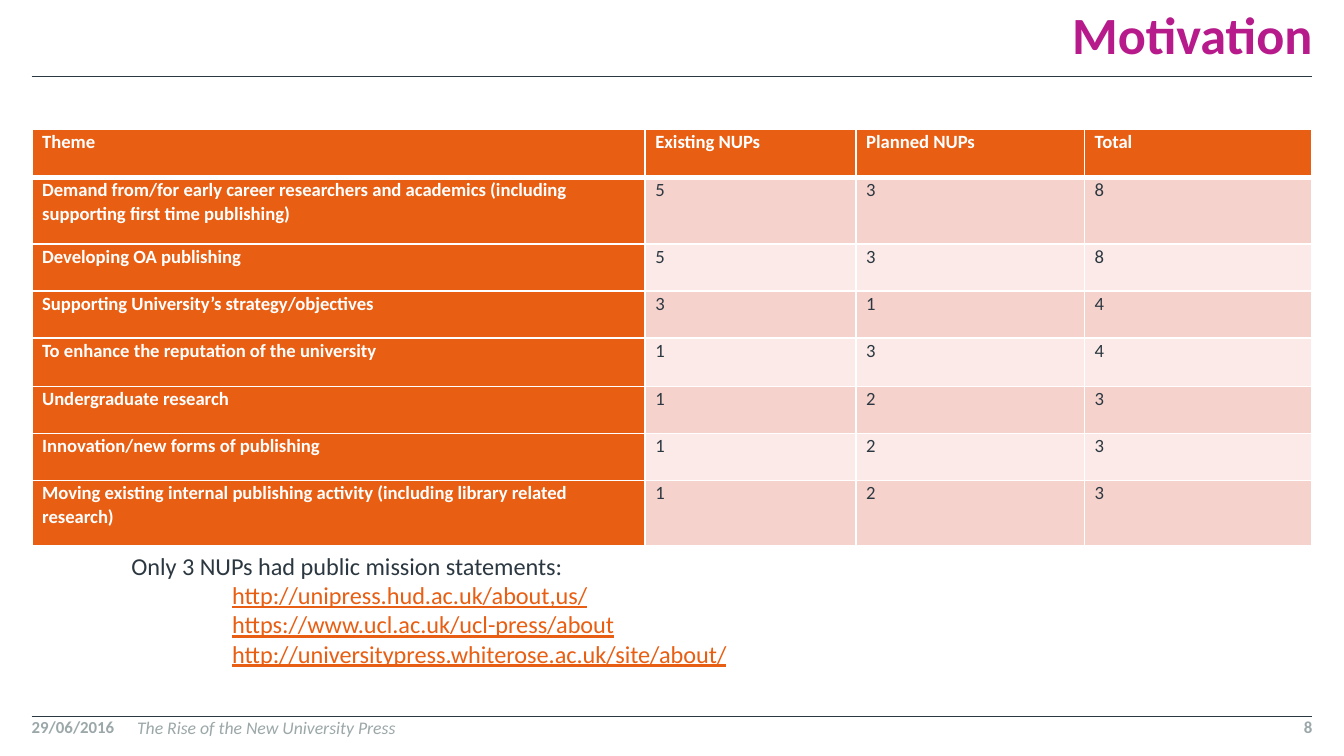
from dataclasses import dataclass

from lxml import etree
from pptx import Presentation
from pptx.dml.color import RGBColor
from pptx.enum.shapes import MSO_CONNECTOR
from pptx.enum.text import MSO_ANCHOR, PP_ALIGN
from pptx.oxml.ns import qn
from pptx.util import Pt

STRAIGHT = MSO_CONNECTOR.STRAIGHT
LEFT, RIGHT = PP_ALIGN.LEFT, PP_ALIGN.RIGHT
TOP, BOTTOM = MSO_ANCHOR.TOP, MSO_ANCHOR.BOTTOM


@dataclass(frozen=True)
class Theme:
    font: str = "Calibri"
    title: str = "B71A8B"
    ink: str = "2C3841"
    accent: str = "E85E12"
    band_dark: str = "F6D2CC"
    band_light: str = "FBEAE7"
    white: str = "FFFFFF"
    muted: str = "9BA7A8"
    title_size: float = 28
    table_size: float = 10
    note_size: float = 13
    footer_size: float = 9
    talk_size: float = 9.5


THEME = Theme()
PAGE_WIDTH, PAGE_HEIGHT = 720, 405
MARGIN = 17
CONTENT_RIGHT = PAGE_WIDTH - MARGIN
FOOTER_TOP = 383.7

COLUMN_WIDTHS = (328.5, 113, 122.4, 121.7)
ROW_HEIGHTS = (25.8, 35.7, 25.2, 25.2, 25.9, 25.2, 25.2, 34.8)
ROWS = (
    ("Theme", "Existing NUPs", "Planned NUPs", "Total"),
    ("Demand from/for early career researchers and academics "
     "(including supporting first time publishing)", "5", "3", "8"),
    ("Developing OA publishing", "5", "3", "8"),
    ("Supporting University’s strategy/objectives", "3", "1", "4"),
    ("To enhance the reputation of the university", "1", "3", "4"),
    ("Undergraduate research", "1", "2", "3"),
    ("Innovation/new forms of publishing", "1", "2", "3"),
    ("Moving existing internal publishing activity "
     "(including library related research)", "1", "2", "3"),
)
MISSION_LINKS = (
    "http://unipress.hud.ac.uk/about,us/",
    "https://www.ucl.ac.uk/ucl-press/about",
    "http://universitypress.whiterose.ac.uk/site/about/",
)


def add_span(para, text, size, color, bold=False, italic=False, underline=False):
    span = para.add_run()
    span.text = text
    font = span.font
    font.name, font.size = THEME.font, Pt(size)
    font.color.rgb = RGBColor.from_string(color)
    font.bold, font.italic, font.underline = bold, italic, underline


def add_box(page, left, top, width, height, insets=(0, 0, 0, 0), anchor=TOP):
    box = page.shapes.add_textbox(Pt(left), Pt(top), Pt(width), Pt(height))
    frame = box.text_frame
    frame.word_wrap = True
    frame.vertical_anchor = anchor
    (frame.margin_left, frame.margin_top,
     frame.margin_right, frame.margin_bottom) = map(Pt, insets)
    return frame


def add_rule(page, y):
    rule = page.shapes.add_connector(
        STRAIGHT, Pt(MARGIN), Pt(y), Pt(CONTENT_RIGHT), Pt(y))
    rule.line.color.rgb = RGBColor.from_string(THEME.ink)
    rule.line.width = Pt(0.5)
    etree.SubElement(rule._element.spPr, qn("a:effectLst"))


def add_title(page, text):
    frame = add_box(page, 218.16, 0, 484.84, 35.28, anchor=BOTTOM)
    para = frame.paragraphs[0]
    para.alignment, para.line_spacing = RIGHT, 0.9
    add_span(para, text, THEME.title_size, THEME.title, bold=True)


def set_borders(cell, top, bottom):
    properties = cell._tc.get_or_add_tcPr()
    for side, width in (("L", 1), ("R", 1), ("T", top), ("B", bottom)):
        line = etree.SubElement(properties, qn(f"a:ln{side}"), w=str(Pt(width)))
        fill = etree.SubElement(line, qn("a:solidFill"))
        etree.SubElement(fill, qn("a:srgbClr"), val=THEME.white)


def fill_cell(cell, text, row, column):
    is_label = row == 0 or column == 0
    band = THEME.band_dark if row % 2 else THEME.band_light
    # A heavier line separates the header from the body
    set_borders(cell, top=3 if row == 1 else 1, bottom=3 if row == 0 else 1)
    cell.fill.solid()
    cell.fill.fore_color.rgb = RGBColor.from_string(
        THEME.accent if is_label else band)
    cell.margin_left = cell.margin_right = Pt(5.6)
    cell.margin_top = cell.margin_bottom = Pt(0)
    para = cell.text_frame.paragraphs[0]
    para.line_spacing = 1.07
    add_span(para, text, THEME.table_size,
             THEME.white if is_label else THEME.ink, bold=is_label)


def add_theme_table(page):
    table = page.shapes.add_table(
        len(ROWS), len(COLUMN_WIDTHS), Pt(MARGIN), Pt(69.3),
        Pt(sum(COLUMN_WIDTHS)), Pt(sum(ROW_HEIGHTS))).table
    for column, width in zip(table.columns, COLUMN_WIDTHS):
        column.width = Pt(width)
    for row, height in zip(table.rows, ROW_HEIGHTS):
        row.height = Pt(height)
    for row, texts in enumerate(ROWS):
        for column, text in enumerate(texts):
            fill_cell(table.cell(row, column), text, row, column)


def add_mission_note(page):
    frame = add_box(page, 63.36, 291.8, 335.52, 85.7, insets=(7.2, 3.6, 7.2, 3.6))
    add_span(frame.paragraphs[0], "Only 3 NUPs had public mission statements:",
             THEME.note_size, THEME.ink)
    for link in MISSION_LINKS:
        para = frame.add_paragraph()
        para._p.get_or_add_pPr().set("marL", str(Pt(54)))
        add_span(para, link, THEME.note_size, THEME.accent, underline=True)


def add_footer_text(page, text, left, width, size, align=LEFT, inset=0, **style):
    frame = add_box(page, left, FOOTER_TOP, width, 12.96, insets=(0, inset, 0, 0))
    para = frame.paragraphs[0]
    para.alignment = align
    add_span(para, text, size, THEME.muted, **style)


def main():
    deck = Presentation()
    deck.slide_width, deck.slide_height = Pt(PAGE_WIDTH), Pt(PAGE_HEIGHT)
    page = deck.slides.add_slide(deck.slide_layouts[6])

    # Frame and heading
    add_rule(page, 41.04)
    add_rule(page, FOOTER_TOP)
    add_title(page, "Motivation")

    # Content
    add_theme_table(page)
    add_mission_note(page)

    # Footer
    add_footer_text(page, "29/06/2016", MARGIN, 56.88, THEME.footer_size, bold=True)
    add_footer_text(page, "The Rise of the New University Press", 73.44, 572.4,
                    THEME.talk_size, inset=0.5, italic=True)
    add_footer_text(page, "8", CONTENT_RIGHT - 56.88, 56.88, THEME.footer_size,
                    align=RIGHT, bold=True)

    deck.save("out.pptx")


if __name__ == "__main__":
    main()
